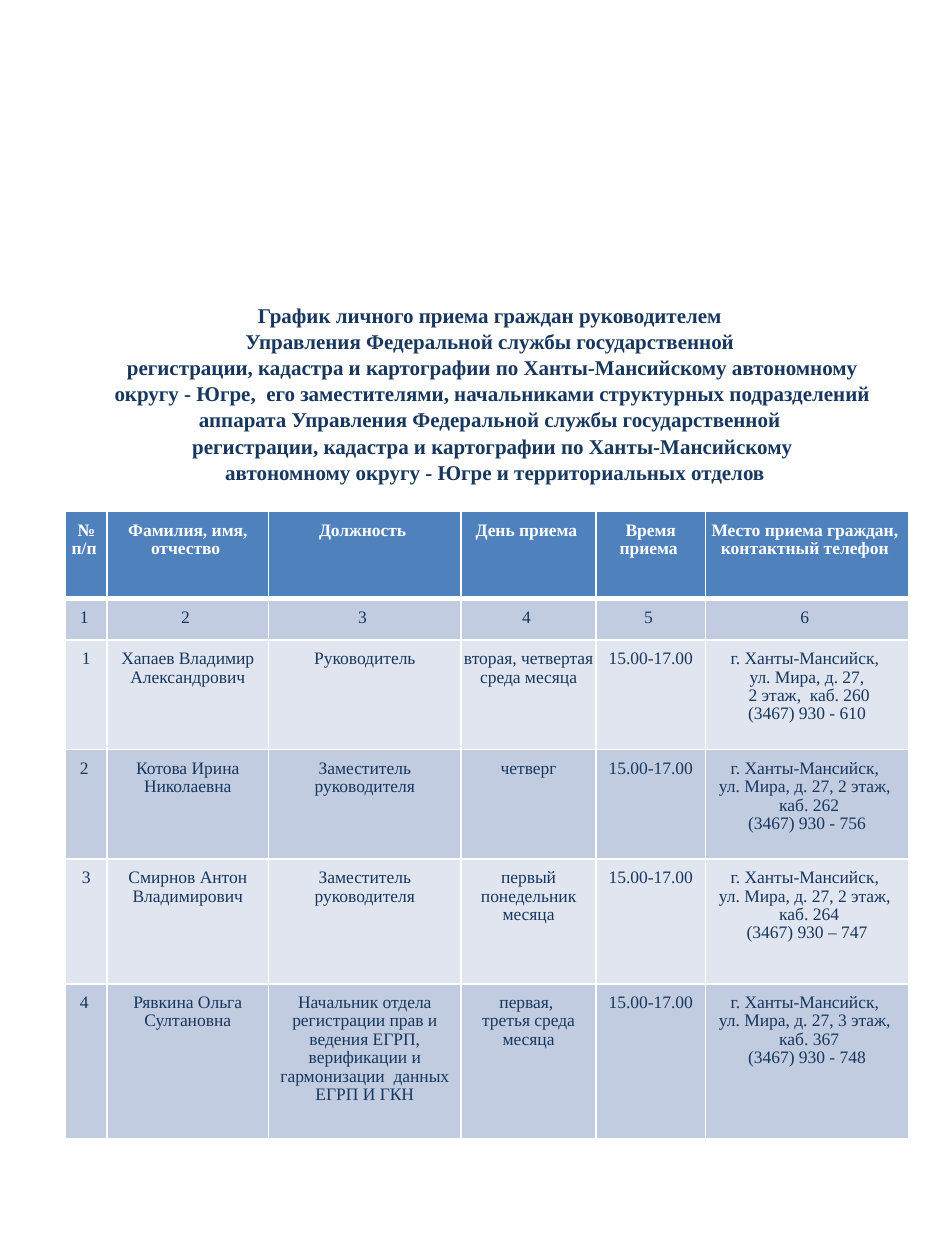
from dataclasses import dataclass

from lxml.etree import SubElement
from pptx import Presentation
from pptx.dml.color import RGBColor as Color
from pptx.enum.text import MSO_ANCHOR as Anchor, MSO_AUTO_SIZE as AutoSize, PP_ALIGN as Align
from pptx.oxml.ns import qn
from pptx.util import Inches, Pt


@dataclass(frozen=True)
class Theme:
    font: str = "Times New Roman"
    ink: str = "17375E"
    white: str = "FFFFFF"
    header: str = "4F81BD"
    dark_band: str = "C1CCE1"
    light_band: str = "E0E5F0"
    title_size: float = 12
    table_size: float = 10
    title_spacing: float = 1.04
    table_spacing: float = 0.95
    thin_line: float = 1
    thick_line: float = 3


@dataclass(frozen=True)
class TextStyle:
    size: float
    color: str
    bold: bool
    spacing: float


@dataclass(frozen=True)
class Row:
    height: float
    cells: tuple[str, ...]


THEME = Theme()
TITLE_STYLE = TextStyle(THEME.title_size, THEME.ink, True, THEME.title_spacing)
HEADER_STYLE = TextStyle(THEME.table_size, THEME.white, True, THEME.table_spacing)
BODY_STYLE = TextStyle(THEME.table_size, THEME.ink, False, THEME.table_spacing)

TITLE = (
    "График личного приема граждан руководителем \n"
    "Управления Федеральной службы государственной \n"
    "регистрации, кадастра и картографии по Ханты-Мансийскому автономному "
    "округу - Югре,  его заместителями, начальниками структурных подразделений "
    "аппарата Управления Федеральной службы государственной \n"
    "регистрации, кадастра и картографии по Ханты-Мансийскому\n"
    " автономному округу - Югре и территориальных отделов"
)
HOURS = "15.00-17.00"
CITY = "г. Ханты-Мансийск, \nул. Мира, д. 27,"
DEPUTY = "Заместитель руководителя"
COLUMN_WIDTHS = (0.33, 1.28, 1.53, 1.07, 0.87, 1.61)
ROWS = (
    Row(0.69, ("№ п/п ", "Фамилия, имя, отчество ", "Должность ", "День приема ",
               "Время приема ", "Место приема граждан, \nконтактный телефон ")),
    Row(0.33, tuple(f"{number} " for number in range(1, 7))),
    Row(0.87, ("1", "Хапаев Владимир Александрович", "Руководитель",
               "вторая, четвертая среда месяца", HOURS,
               f"{CITY}\n 2 этаж,  каб. 260\n(3467) 930 - 610")),
    Row(0.87, ("2 ", "Котова Ирина Николаевна", DEPUTY, "четверг", HOURS,
               f"{CITY} 2 этаж, \n каб. 262\n(3467) 930 - 756")),
    Row(0.99, ("3", "Смирнов Антон Владимирович", DEPUTY,
               "первый понедельник месяца", HOURS,
               f"{CITY} 2 этаж, \n каб. 264\n(3467) 930 – 747")),
    Row(1.23, ("4 ", "Рявкина Ольга Султановна",
               "Начальник отдела регистрации прав и ведения ЕГРП, верификации "
               "и гармонизации  данных ЕГРП И ГКН",
               "первая, \nтретья среда месяца", HOURS,
               f"{CITY} 3 этаж, \n каб. 367\n(3467) 930 - 748")),
)


def apply_format(target, values: dict) -> None:
    for name, value in values.items():
        setattr(target, name, value)


def write_text(frame, text: str, style: TextStyle) -> None:
    frame.text = text
    for para in frame.paragraphs:
        apply_format(para, {"alignment": Align.CENTER, "line_spacing": style.spacing,
                            "space_before": Pt(0), "space_after": Pt(0)})
        for span in para.runs:
            apply_format(span.font, {"name": THEME.font, "size": Pt(style.size),
                                     "bold": style.bold})
            span.font.color.rgb = Color.from_string(style.color)


def add_title(page) -> None:
    box = page.shapes.title
    apply_format(box, {"left": Inches(0.68), "top": Inches(2.34),
                       "width": Inches(6.46), "height": Inches(1.72)})
    apply_format(box.text_frame, {"word_wrap": True, "auto_size": AutoSize.NONE,
                                  "vertical_anchor": Anchor.TOP})
    write_text(box.text_frame, TITLE, TITLE_STYLE)


def add_borders(cell, top: float, bottom: float) -> None:
    properties = cell._tc.get_or_add_tcPr()
    widths = {"L": THEME.thin_line, "R": THEME.thin_line, "T": top, "B": bottom}
    for side, width in widths.items():
        line = SubElement(properties, qn(f"a:ln{side}"), w=str(Pt(width)))
        fill = SubElement(line, qn("a:solidFill"))
        SubElement(fill, qn("a:srgbClr"), val=THEME.white)


def add_schedule(page) -> None:
    table = page.shapes.add_table(
        len(ROWS), len(COLUMN_WIDTHS), Inches(0.52), Inches(4.06),
        Inches(sum(COLUMN_WIDTHS)), Inches(sum(row.height for row in ROWS))).table
    for column, width in zip(table.columns, COLUMN_WIDTHS):
        column.width = Inches(width)
    for index, row in enumerate(ROWS):
        table.rows[index].height = Inches(row.height)
        is_header = index == 0
        band = THEME.dark_band if index % 2 else THEME.light_band
        for cell, text in zip(table.rows[index].cells, row.cells):
            apply_format(cell, {"margin_left": Inches(0.01), "margin_right": Inches(0.01),
                                "margin_top": Inches(0.08), "margin_bottom": Inches(0.08),
                                "vertical_anchor": Anchor.TOP})
            add_borders(cell, THEME.thick_line if index == 1 else THEME.thin_line,
                        THEME.thick_line if is_header else THEME.thin_line)
            cell.fill.solid()
            cell.fill.fore_color.rgb = Color.from_string(THEME.header if is_header else band)
            write_text(cell.text_frame, text, HEADER_STYLE if is_header else BODY_STYLE)


def main() -> None:
    deck = Presentation()
    apply_format(deck, {"slide_width": Inches(7.5), "slide_height": Inches(10)})
    page = deck.slides.add_slide(deck.slide_layouts[5])
    add_title(page)
    add_schedule(page)
    deck.save("out.pptx")


if __name__ == "__main__":
    main()
